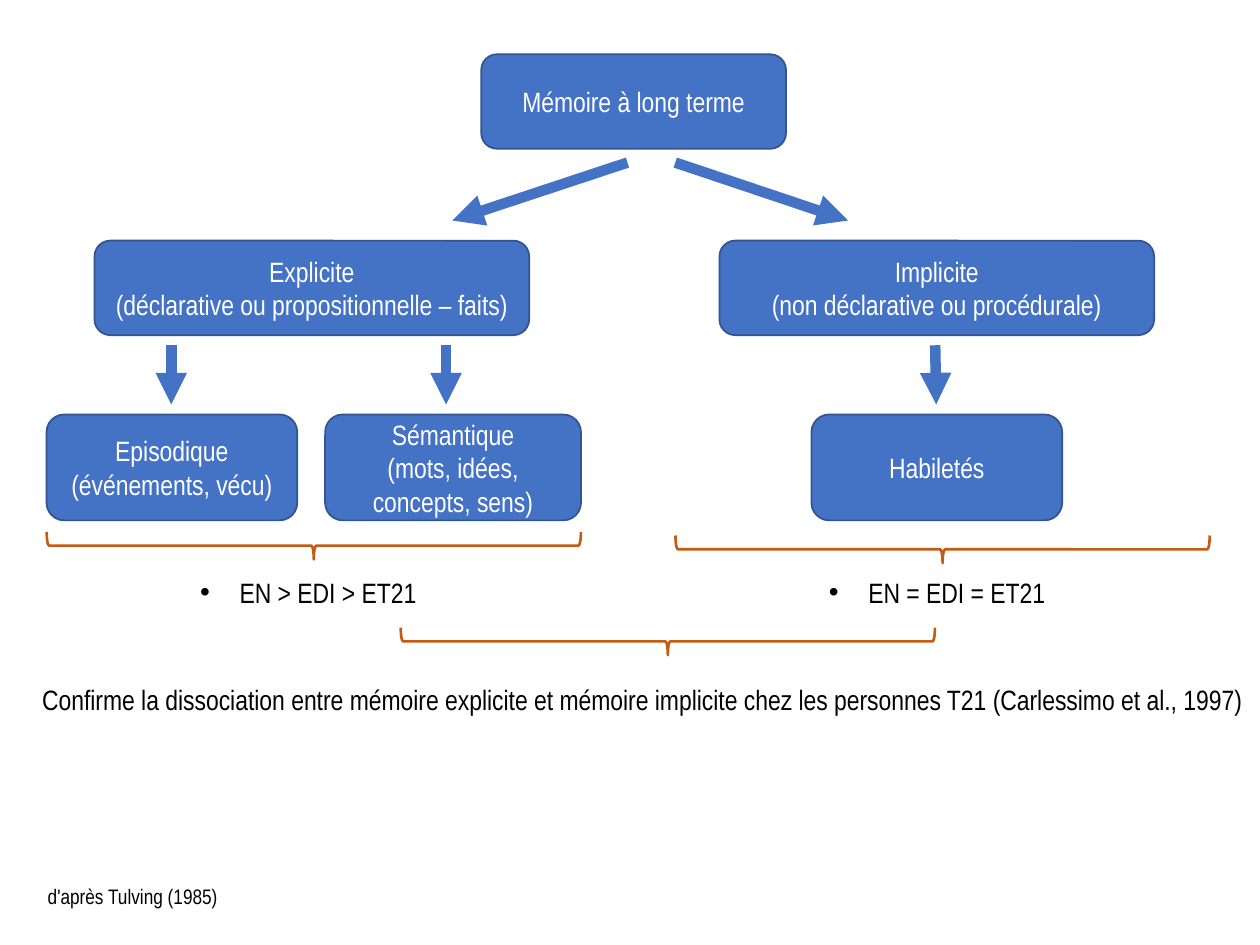
from lxml import etree
from pptx import Presentation
from pptx.dml.color import RGBColor
from pptx.enum import shapes as kinds, text as layout
from pptx.oxml import ns
from pptx.util import Pt

COLORS = {"box": "4472C4", "outline": "325491", "brace": "C55A11",
          "on_box": "FFFFFF", "ink": "000000"}
FONT = "Arial Narrow"
BODY, SMALL = 16, 12

# Memory types by level: (top, height, [(left, width, lines)])
LEVELS = [
    (31, 54, [(275, 174.2, ["Mémoire à long terme"])]),
    (137.5, 54, [
        (54, 248.4, ["Explicite", "(déclarative ou propositionnelle – faits)"]),
        (411.1, 248.4, ["Implicite", "(non déclarative ou procédurale)"])]),
    (236.9, 60.5, [
        (26.6, 143.3, ["Episodique", "(événements, vécu)"]),
        (185.8, 146.2, ["Sémantique", "(mots, idées, concepts, sens)"]),
        (463.7, 143.3, ["Habiletés"])]),
]
# Arrows between levels: (start y, end y, [(start x, end x)])
ARROWS = [
    (92.9, 126, [(385.9, 484.6), (358.6, 258.5)]),
    (197.3, 231.1, [(97.9, 97.9), (254.9, 254.9), (534.4, 535)]),
]
# Centre of each downward brace
BRACES = [(179.3, 311.8), (538.6, 313.9), (381.6, 366.5)]
BRACE_SPAN, BRACE_DEPTH = 305.3, 15.8
FINDINGS = [(107.3, "EN > EDI > ET21"), (466.6, "EN = EDI = ET21")]
FINDING_TOP, FINDING_WIDTH, LINE_HEIGHT, BULLET_INDENT = 325.4, 143.3, 26.6, 22.5
CONCLUSION = ("Confirme la dissociation entre mémoire explicite et mémoire implicite "
              "chez les personnes T21 (Carlessimo et al., 1997)")
SOURCE = "d'après Tulving (1985)"


def rgb(name):
    return RGBColor.from_string(COLORS[name])


def add_run(paragraph, words, size, color):
    run = paragraph.add_run()
    run.text = words
    run.font.name, run.font.size = FONT, Pt(size)
    run.font.color.rgb = rgb(color)


def add_box(slide, left, top, width, height, lines):
    box = slide.shapes.add_shape(kinds.MSO_SHAPE.ROUNDED_RECTANGLE,
                                 Pt(left), Pt(top), Pt(width), Pt(height))
    box.shadow.inherit = False
    box.fill.solid()
    box.fill.fore_color.rgb = rgb("box")
    box.line.color.rgb = rgb("outline")
    box.line.width = Pt(1)
    frame = box.text_frame
    frame.word_wrap = True
    frame.vertical_anchor = layout.MSO_ANCHOR.MIDDLE
    for i, line in enumerate(lines):
        paragraph = frame.add_paragraph() if i else frame.paragraphs[0]
        paragraph.alignment = layout.PP_ALIGN.CENTER
        add_run(paragraph, line, BODY, "on_box")


def add_arrow(slide, x1, y1, x2, y2):
    arrow = slide.shapes.add_connector(kinds.MSO_CONNECTOR.STRAIGHT,
                                       Pt(x1), Pt(y1), Pt(x2), Pt(y2))
    arrow.line.color.rgb = rgb("box")
    arrow.line.width = Pt(6)
    etree.SubElement(arrow.line._get_or_add_ln(), ns.qn("a:tailEnd"), type="triangle")
    etree.SubElement(arrow._element.spPr, ns.qn("a:effectLst"))


def add_brace(slide, center_x, center_y):
    """Place a right brace turned a quarter so that it points down."""
    brace = slide.shapes.add_shape(
        kinds.MSO_SHAPE.RIGHT_BRACE,
        Pt(center_x - BRACE_DEPTH / 2), Pt(center_y - BRACE_SPAN / 2),
        Pt(BRACE_DEPTH), Pt(BRACE_SPAN))
    brace.rotation = 90
    brace.shadow.inherit = False
    brace.fill.background()
    brace.line.color.rgb = rgb("brace")
    brace.line.width = Pt(1.5)


def add_note(slide, left, top, width, height, words, size=BODY, wrap=False):
    note = slide.shapes.add_textbox(Pt(left), Pt(top), Pt(width), Pt(height))
    frame = note.text_frame
    frame.word_wrap = wrap
    frame.auto_size = layout.MSO_AUTO_SIZE.SHAPE_TO_FIT_TEXT
    add_run(frame.paragraphs[0], words, size, "ink")
    return frame.paragraphs[0]


def add_bullet(paragraph):
    props = paragraph._p.get_or_add_pPr()
    props.set("marL", str(Pt(BULLET_INDENT)))
    props.set("indent", str(-Pt(BULLET_INDENT)))
    etree.SubElement(props, ns.qn("a:buFont"), typeface="Arial")
    etree.SubElement(props, ns.qn("a:buChar"), char="•")


def main():
    deck = Presentation()
    deck.slide_width, deck.slide_height = Pt(720), Pt(540)
    slide = deck.slides.add_slide(deck.slide_layouts[6])

    for top, height, boxes in LEVELS:
        for left, width, lines in boxes:
            add_box(slide, left, top, width, height, lines)
    for start_y, end_y, spans in ARROWS:
        for start_x, end_x in spans:
            add_arrow(slide, start_x, start_y, end_x, end_y)
    for center in BRACES:
        add_brace(slide, *center)
    for left, finding in FINDINGS:
        add_bullet(add_note(slide, left, FINDING_TOP, FINDING_WIDTH, LINE_HEIGHT, finding))
    add_note(slide, 17, 386.6, 703, LINE_HEIGHT, CONCLUSION, wrap=True)
    add_note(slide, 20.2, 501.1, 112.3, 21.6, SOURCE, SMALL)

    deck.save("out.pptx")


if __name__ == "__main__":
    main()
